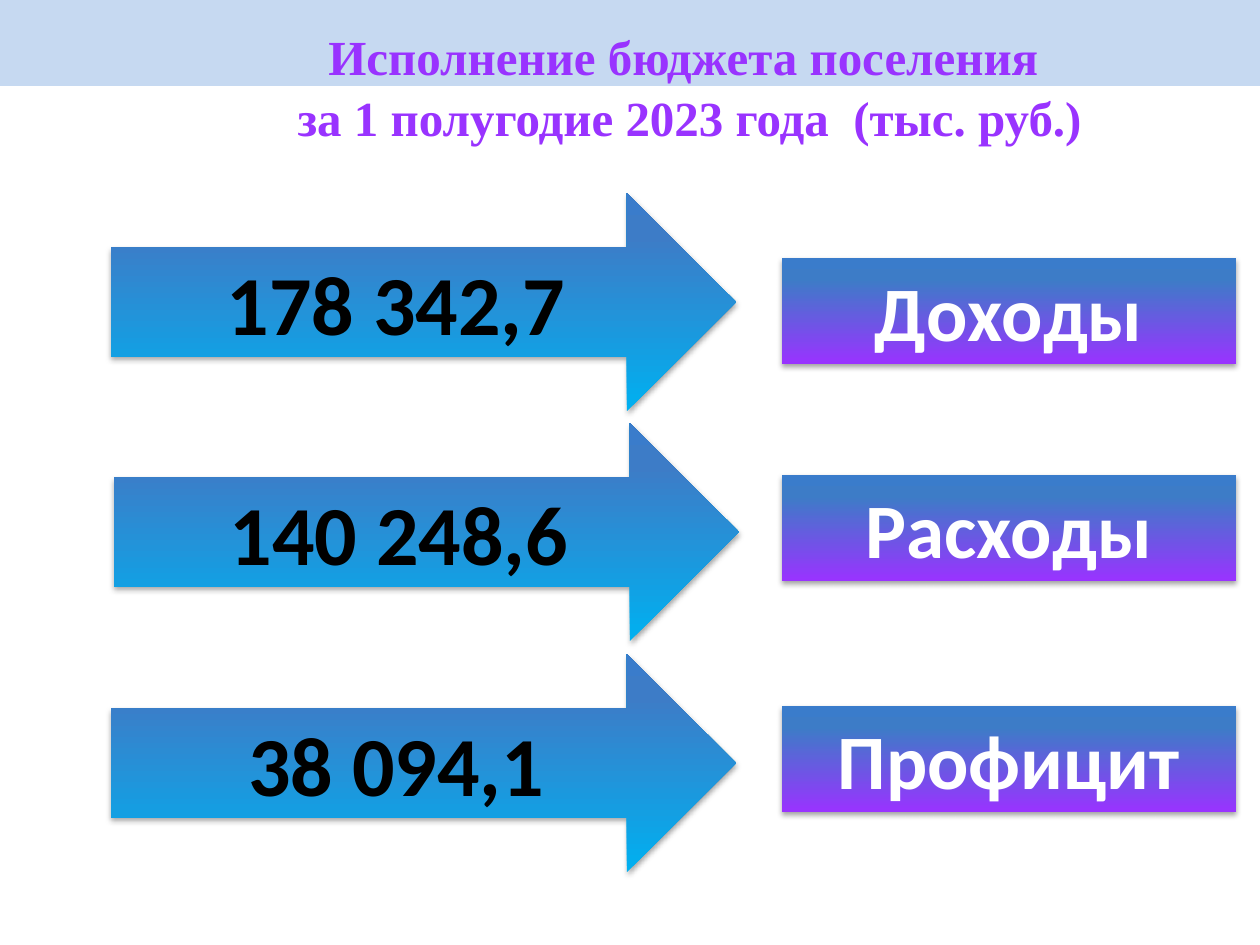
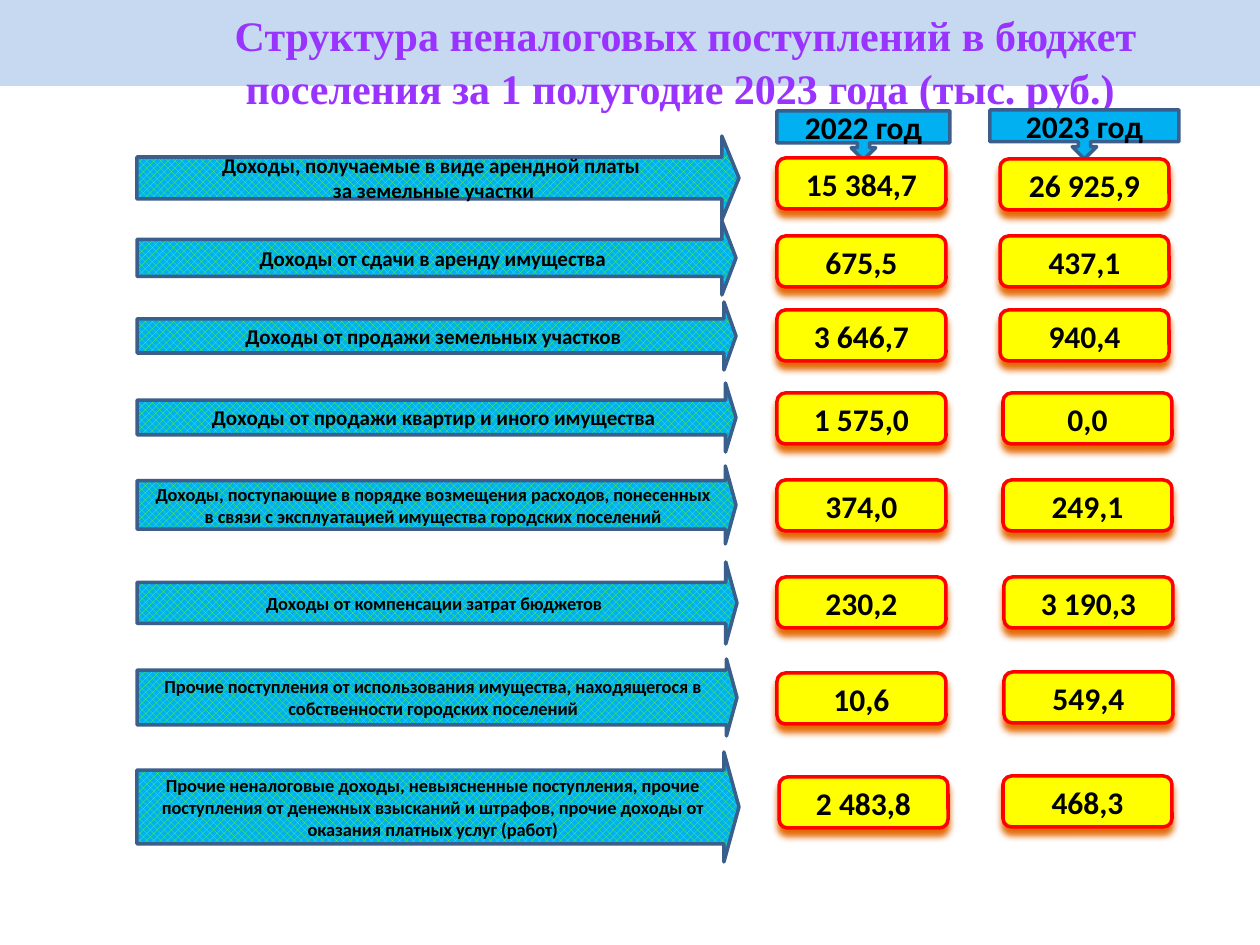
from copy import deepcopy
from lxml import etree
from pptx import Presentation
from pptx import util as u
from pptx.dml.color import RGBColor
from pptx.enum import dml, shapes, text
from pptx.oxml import ns

PX = 914400 / 126
KIND = shapes.MSO_SHAPE
PURPLE, SKY, BLACK = "9933FF", "00B0F0", "000000"
EDGE = ("3A5F8C", 2)
SOFT = (BLACK, 35, 3.1, 1.8)
GLOW = ("E46C0A", 100, 4, 4)
HEADING = {"name": "Times New Roman", "bold": True}
BODY = {"name": "Calibri", "bold": True}


def rgb(value):
    return RGBColor.from_string(value)


def block(slide, kind, box, words="", size=18, ink=BLACK, face=BODY, fill=None,
          gradient=None, pattern=None, line=None, shadow=None, adjust=(),
          anchor=text.MSO_ANCHOR.MIDDLE, spacing=None):
    place = [u.Emu(round(n * PX)) for n in box]
    item = slide.shapes.add_shape(kind, *place) if kind else slide.shapes.add_textbox(*place)
    for index, value in enumerate(adjust):
        item.adjustments[index] = value
    if fill:
        item.fill.solid()
        item.fill.fore_color.rgb = rgb(fill)
    if gradient:
        item.fill.gradient()
        item.fill.gradient_angle = 90
        stops = item.element.spPr.find(".//" + ns.qn("a:gsLst"))
        stops.append(deepcopy(stops[-1]))
        for stop, (position, color) in zip(item.fill.gradient_stops, gradient):
            stop.position = position
            stop.color.rgb = rgb(color)
    if pattern:
        item.fill.patterned()
        item.fill.pattern = dml.MSO_PATTERN.OUTLINED_DIAMOND
        item.fill.fore_color.rgb, item.fill.back_color.rgb = map(rgb, pattern)
    if line:
        item.line.color.rgb = rgb(line[0])
        item.line.width = u.Pt(line[1])
    else:
        item.line.fill.background()
    item.shadow.inherit = False
    if shadow:
        color, alpha, blur, distance = shadow
        effects = item.element.spPr.find(ns.qn("a:effectLst"))
        outer = etree.SubElement(effects, ns.qn("a:outerShdw"), blurRad=str(u.Pt(blur)),
                                 dist=str(u.Pt(distance)), dir="5400000", rotWithShape="0")
        tone = etree.SubElement(outer, ns.qn("a:srgbClr"), val=color)
        etree.SubElement(tone, ns.qn("a:alpha"), val=str(alpha * 1000))
    frame = item.text_frame
    frame.word_wrap = True
    frame.vertical_anchor = anchor
    if words:
        frame.text = words
        for paragraph in frame.paragraphs:
            paragraph.alignment = text.PP_ALIGN.CENTER
            paragraph.line_spacing = spacing
            for run in paragraph.runs:
                for key, value in {**face, "size": u.Pt(size)}.items():
                    setattr(run.font, key, value)
                run.font.color.rgb = rgb(ink)
    return item


deck = Presentation()
deck.slide_width, deck.slide_height = u.Emu(round(1260 * PX)), u.Emu(round(945 * PX))

headings = [
    ("Исполнение бюджета поселения \nза 1 полугодие 2023 года  (тыс. руб.)", (144, 17, 1091, 131), 28),
    ("Структура неналоговых поступлений в бюджет поселения за 1 полугодие 2023 года (тыс. руб.) ",
     (126, 1, 1119, 54), 24),
]
pages = []
for words, box, size in headings:
    page = deck.slides.add_slide(deck.slide_layouts[6])
    block(page, KIND.RECTANGLE, (0, 0, 1260, 86), fill="C6D9F1")
    heading = block(page, None, box, words, size, PURPLE, HEADING,
                    anchor=text.MSO_ANCHOR.TOP, spacing=1.05)
    for properties in heading.element.iter(ns.qn("a:rPr")):
        outline = etree.Element(ns.qn("a:ln"), w=str(u.Pt(0.83)))
        solid = etree.SubElement(outline, ns.qn("a:solidFill"))
        etree.SubElement(solid, ns.qn("a:srgbClr"), val="467AB8")
        properties.insert(0, outline)
    pages.append(page)
totals, structure = pages

blues = [(0.8, "3D7CC7"), (1, "3A7CCB")]
budget = [
    ("178 342,7", "Доходы", 111, 193, 258),
    ("140 248,6", "Расходы", 114, 423, 475),
    ("38 094,1", "Профицит", 111, 654, 706),
]
for amount, label, left, arrow_top, label_top in budget:
    block(totals, KIND.RIGHT_ARROW, (left, arrow_top, 625, 218), amount, 48,
          gradient=[(0, SKY)] + blues, shadow=SOFT)
    block(totals, KIND.RECTANGLE, (782, label_top, 454, 106), label, 44, "FFFFFF",
          gradient=[(0, PURPLE)] + blues, shadow=SOFT, anchor=text.MSO_ANCHOR.TOP)

incomes = [
    ("Доходы, получаемые в виде арендной платы \nза земельные участки",
     12, (136, 602, 84), (0.5, 0.204), ("15 384,7", 777, 158), ("26 925,9", 1000, 159)),
    ("Доходы от сдачи в аренду имущества",
     12, (221, 599, 74), (0.5, 0.191), ("675,5", 777, 236), ("437,1", 1000, 236)),
    ("Доходы от продажи земельных участков",
     12, (302, 599, 68), (0.5, 0.177), ("3 646,7", 777, 310), ("940,4", 1000, 310)),
    ("Доходы от продажи квартир и иного имущества",
     12, (383, 599, 69), (0.5, 0.152), ("1 575,0", 777, 393), ("0,0", 1003, 393)),
    ("Доходы, поступающие в порядке возмещения расходов, понесенных "
     "в связи с эксплуатацией имущества городских поселений",
     10.5, (466, 599, 78), (0.62, 0.137), ("374,0", 777, 480), ("249,1", 1003, 480)),
    ("Доходы от компенсации затрат бюджетов",
     10.5, (562, 600, 82), (0.5, 0.137), ("230,2", 777, 577), ("3 190,3", 1004, 577)),
    ("Прочие поступления от использования имущества, находящегося в "
     "собственности городских поселений",
     10.5, (659, 600, 77), (0.712, 0.137), ("10,6", 777, 673), ("549,4", 1004, 672)),
    ("Прочие неналоговые доходы, невыясненные поступления, прочие поступления от "
     "денежных взысканий и штрафов, прочие доходы от оказания платных услуг (работ)",
     10.5, (752, 602, 110), (0.671, 0.137), ("2 483,8", 779, 777), ("468,3", 1003, 776)),
]
for year, box in [("2022 год", (777, 111, 173, 49)), ("2023 год", (990, 110, 189, 49))]:
    block(structure, KIND.DOWN_ARROW_CALLOUT, box, year, fill=SKY, line=EDGE)
for source, size, (top, width, height), adjust, *amounts in incomes:
    block(structure, KIND.RIGHT_ARROW, (137, top, width, height), source, size,
          pattern=("66FF33", SKY), line=EDGE, adjust=adjust)
    for amount, left, amount_top in amounts:
        block(structure, KIND.ROUNDED_RECTANGLE, (left, amount_top, 169, 51), amount,
              fill="FFFF00", line=("FF0000", 2), shadow=GLOW)

deck.save("out.pptx")
